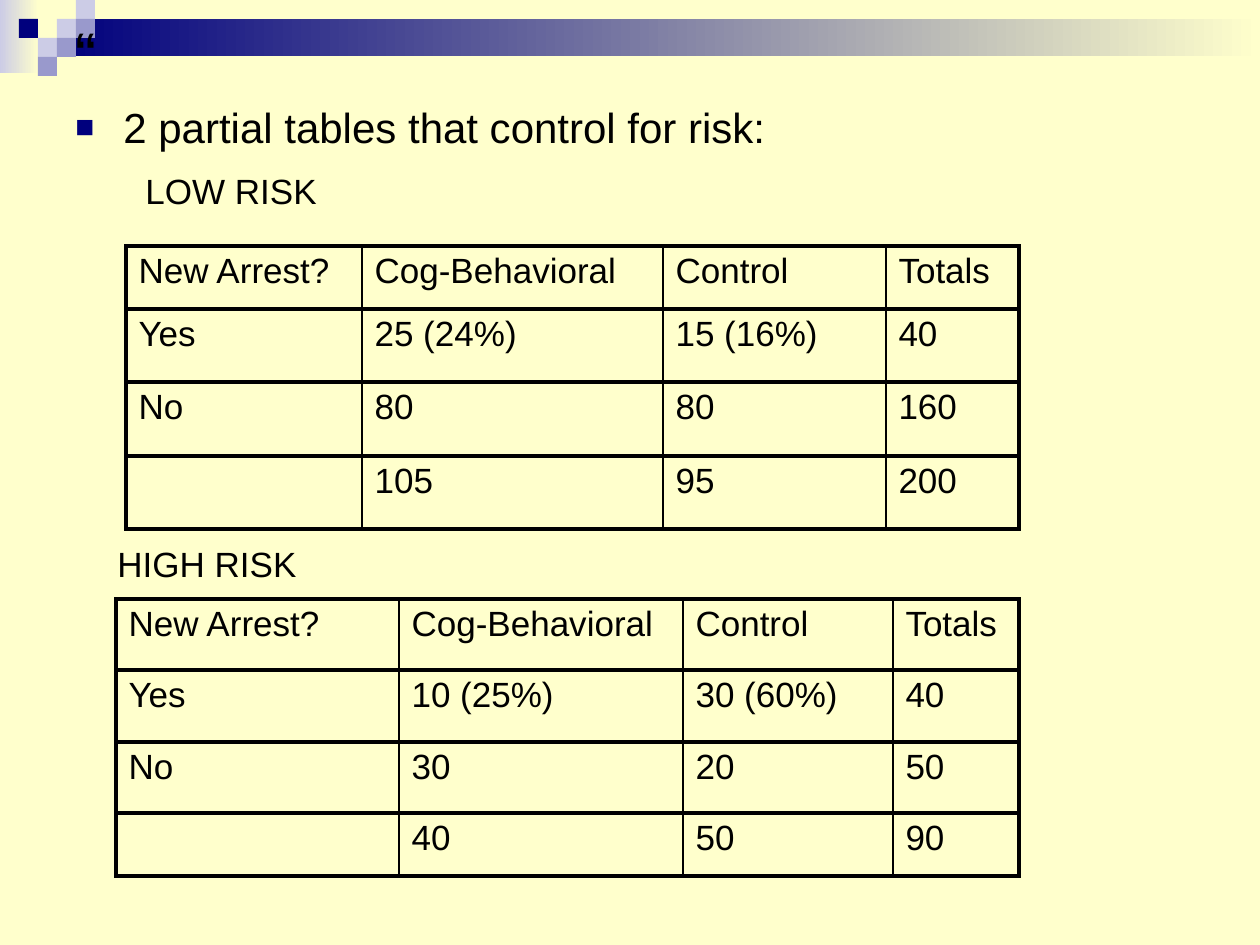
from lxml.etree import SubElement
from pptx import Presentation
from pptx.dml.color import RGBColor
from pptx.enum.shapes import MSO_SHAPE
from pptx.enum.text import MSO_ANCHOR, PP_ALIGN
from pptx.oxml import parse_xml
from pptx.oxml.ns import nsdecls, qn
from pptx.util import Emu, Pt

PX = 914400 / 126  # 126 px to the inch
NAVY, LILAC, VIOLET, CREAM = "00007D", "CCCCE6", "9999CC", "FFFFCC"


def px(*lengths):
    return [Emu(round(n * PX)) for n in lengths]


def write(p, text, size):
    r = p.add_run()
    r.text = text
    for name, value in {"size": Pt(size), "name": "Arial", "bold": False}.items():
        setattr(r.font, name, value)
    r.font.color.rgb = RGBColor.from_string("000000")


prs = Presentation()
prs.slide_width, prs.slide_height = px(1260, 945)
s = prs.slides.add_slide(prs.slide_layouts[5])
s.background.fill.solid()
s.background.fill.fore_color.rgb = RGBColor.from_string(CREAM)

# Header: two fading bands, then small squares on a 19 px grid
U = 19
header = [(0, 0, 39, 73, LILAC, CREAM), (57, U, 1203, 37, NAVY, CREAM)]
squares = [(3, 1, LILAC), (4, 0, LILAC), (4, 1, VIOLET), (2, 2, LILAC),
           (1, 1, NAVY), (3, 2, VIOLET), (2, 3, VIOLET)]
header += [(col * U, row * U, U, U, color, None) for col, row, color in squares]
for x, y, w, h, color, fade in header:
    sp = s.shapes.add_shape(MSO_SHAPE.RECTANGLE, *px(x, y, w, h))
    sp.shadow.inherit = False
    sp.line.fill.background()
    if fade:
        sp.fill.gradient()
        sp.fill.gradient_angle = 0
        for stop, position, tint in zip(sp.fill.gradient_stops, (0, 1), (color, fade)):
            stop.position = position
            stop.color.rgb = RGBColor.from_string(tint)
    else:
        sp.fill.solid()
        sp.fill.fore_color.rgb = RGBColor.from_string(color)

# Title, in front of the header
title = s.shapes.title
title.left, title.top, title.width, title.height = px(63, 0, 1134, 105)
s.shapes._spTree.append(title._element)
title.text_frame.vertical_anchor = MSO_ANCHOR.MIDDLE
p = title.text_frame.paragraphs[0]
p.alignment = PP_ALIGN.LEFT
write(p, "“", 36)

# Bulleted heading with the first table's label
tf = s.shapes.add_textbox(*px(63, 95, 1124, 126)).text_frame
tf.word_wrap = True
p = tf.paragraphs[0]
p.space_before = Pt(2.4)
write(p, "2 partial tables that control for risk:", 24)
pPr = p._p.get_or_add_pPr()
pPr.set("marL", str(px(48)[0]))
pPr.set("indent", str(px(-48)[0]))
SubElement(SubElement(pPr, qn("a:buClr")), qn("a:srgbClr"), val=NAVY)
SubElement(pPr, qn("a:buSzPct"), val="75000")
SubElement(pPr, qn("a:buFont"), typeface="Arial")
SubElement(pPr, qn("a:buChar"), char="■")
p = tf.add_paragraph()
p.space_before = Pt(10)
p._p.get_or_add_pPr().set("marL", str(px(70)[0]))
write(p, "LOW RISK", 20)

# Second table's label
tf = s.shapes.add_textbox(*px(105, 536, 968, 54)).text_frame
tf.word_wrap = True
write(tf.paragraphs[0], "HIGH RISK", 20)

# Partial tables: position, column widths, row heights, body rows
heads = ["New Arrest?", "Cog-Behavioral", "Control", "Totals"]
tables = [
    (126, 246, [236, 301, 223, 133], [63, 73, 74, 73],
     [["Yes", "25 (24%)", "15 (16%)", "40"],
      ["No", "80", "80", "160"],
      ["", "105", "95", "200"]]),
    (116, 599, [283, 284, 210, 126], [71, 72, 71, 63],
     [["Yes", "10 (25%)", "30 (60%)", "40"],
      ["No", "30", "20", "50"],
      ["", "40", "50", "90"]]),
]
for x, y, widths, heights, body in tables:
    table = s.shapes.add_table(len(heights), len(widths),
                               *px(x, y, sum(widths), sum(heights))).table
    table.first_row = table.horz_banding = False
    for column, width in zip(table.columns, px(*widths)):
        column.width = width
    for row, height in zip(table.rows, px(*heights)):
        row.height = height
    for i, texts in enumerate([heads] + body):
        for j, text in enumerate(texts):
            cell = table.cell(i, j)
            cell.fill.background()
            if text:
                write(cell.text_frame.paragraphs[0], text, 20)
            # Thin lines between columns, thick ones everywhere else
            edges = {"lnL": 1 if j else 2.25,
                     "lnR": 1 if j < len(texts) - 1 else 2.25,
                     "lnT": 2.25, "lnB": 2.25}
            for k, (tag, width) in enumerate(edges.items()):
                cell._tc.get_or_add_tcPr().insert(k, parse_xml(
                    f'<a:{tag} {nsdecls("a")} w="{Pt(width)}"><a:solidFill>'
                    f'<a:srgbClr val="000000"/></a:solidFill></a:{tag}>'))

prs.save("out.pptx")
